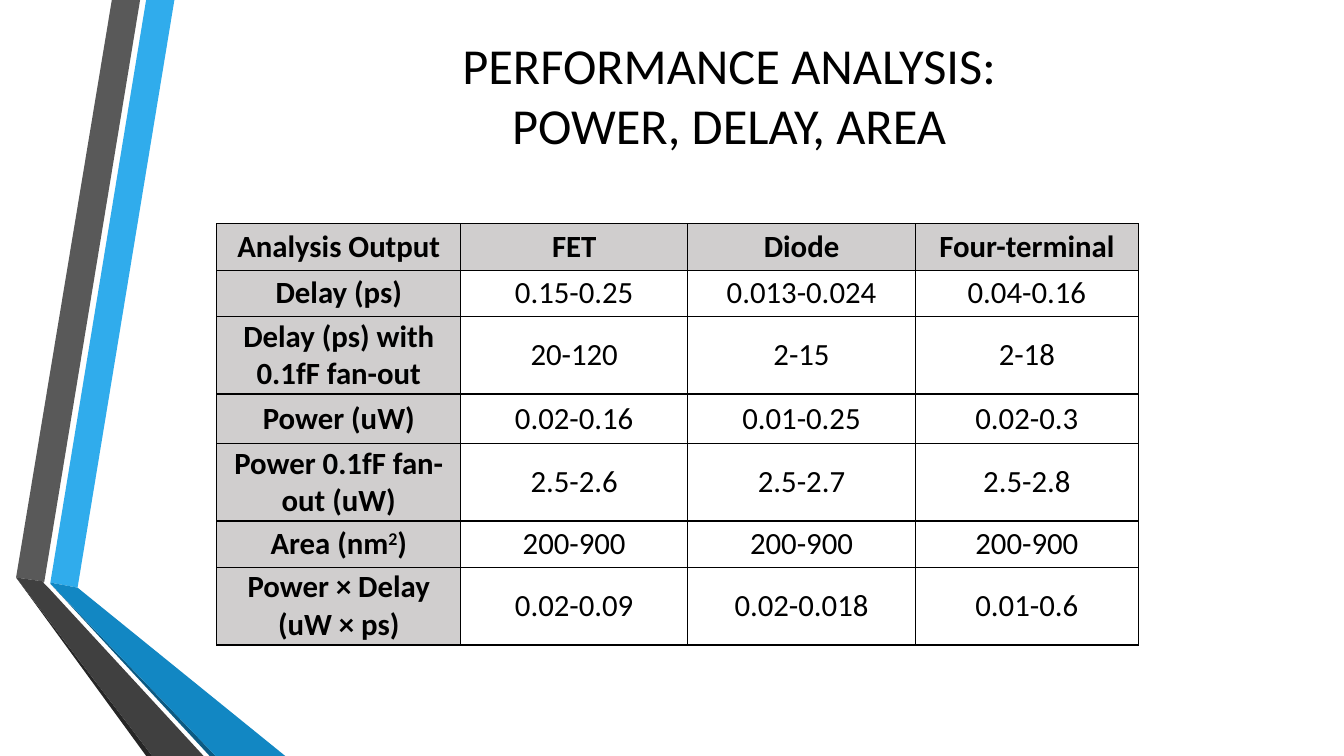
from lxml import etree
from pptx import Presentation
from pptx import util as u
from pptx.dml import color
from pptx.enum import text
from pptx.oxml import ns

FONT = "Calibri"
BLACK, WHITE, HEADER_GREY = "000000", "FFFFFF", "D0CECE"

RIBBONS = [
    ("30ACEC", [(0.5, 5.78), (0.77, 5.83), (1.73, 0), (1.45, 0)]),
    ("595959", [(1.39, 0), (1.11, 0), (0.16, 5.73), (0.44, 5.77)]),
    ("262626", [(0.16, 5.73), (1.45, 7.5), (1.51, 7.5)]),
    ("0C5A82", [(0.5, 5.79), (2.08, 7.5), (2.14, 7.5)]),
    ("1287C3", [(0.5, 5.79), (2.14, 7.5), (2.83, 7.5), (0.77, 5.83), (0.5, 5.78)]),
    ("404040", [(2.02, 7.5), (0.48, 5.83), (0.43, 5.78), (0.44, 5.77),
                (0.16, 5.73), (1.51, 7.5)]),
]

COLUMN_WIDTHS = [2.42, 2.25, 2.26, 2.21]
ROW_HEIGHTS = [0.46, 0.46, 0.77, 0.49, 0.77, 0.46, 0.77]
# A caret marks the next character as superscript.
ANALYSIS = [
    ["Analysis Output", "FET", "Diode", "Four-terminal"],
    ["Delay (ps)", "0.15-0.25", "0.013-0.024", "0.04-0.16"],
    ["Delay (ps) with 0.1fF fan-out", "20-120", "2-15", "2-18"],
    ["Power (uW)", "0.02-0.16", "0.01-0.25", "0.02-0.3"],
    ["Power 0.1fF fan-out (uW)", "2.5-2.6", "2.5-2.7", "2.5-2.8"],
    ["Area (nm^2)", "200-900", "200-900", "200-900"],
    ["Power × Delay (uW × ps)", "0.02-0.09", "0.02-0.018", "0.01-0.6"],
]


def paint(fill, shade):
    fill.solid()
    fill.fore_color.rgb = color.RGBColor.from_string(shade)


def style(font, size, bold=False):
    font.name, font.size, font.bold = FONT, u.Pt(size), bold
    paint(font.fill, BLACK)


def add_ribbon(page, shade, points):
    corners = [(u.Inches(x), u.Inches(y)) for x, y in points]
    builder = page.shapes.build_freeform(*corners[0])
    builder.add_line_segments(corners[1:], close=True)
    ribbon = builder.convert_to_shape()
    ribbon.shadow.inherit = False
    paint(ribbon.fill, shade)
    ribbon.line.fill.background()


def add_title(page, wording):
    title = page.shapes.title
    title.left, title.top = u.Inches(1.81), u.Inches(0.25)
    title.width, title.height = u.Inches(10.96), u.Inches(1.37)
    frame = title.text_frame
    frame.text = wording
    frame.word_wrap = True
    frame.vertical_anchor = text.MSO_ANCHOR.MIDDLE
    para = frame.paragraphs[0]
    para.alignment = text.PP_ALIGN.CENTER
    for span in para.runs:
        style(span.font, 36)


def add_borders(cell):
    properties = cell._tc.get_or_add_tcPr()
    for position, side in enumerate(("lnL", "lnR", "lnT", "lnB")):
        line = etree.Element(ns.qn(f"a:{side}"), w=str(u.Pt(1)))
        solid = etree.SubElement(line, ns.qn("a:solidFill"))
        etree.SubElement(solid, ns.qn("a:srgbClr"), val=BLACK)
        properties.insert(position, line)


def fill_cell(cell, wording, heading):
    paint(cell.fill, HEADER_GREY if heading else WHITE)
    add_borders(cell)
    cell.margin_left = cell.margin_right = u.Inches(0.02)
    cell.margin_top = cell.margin_bottom = 0
    cell.vertical_anchor = text.MSO_ANCHOR.MIDDLE
    para = cell.text_frame.paragraphs[0]
    para.alignment = text.PP_ALIGN.CENTER
    base, _, raised = wording.partition("^")
    for part, baseline in ((base, 0), (raised[:1], 30000), (raised[1:], 0)):
        if part:
            span = para.add_run()
            span.text = part
            style(span.font, 22, heading)
            if baseline:
                span._r.get_or_add_rPr().set("baseline", str(baseline))


def add_analysis_table(page):
    table = page.shapes.add_table(
        len(ROW_HEIGHTS), len(COLUMN_WIDTHS), u.Inches(2.15), u.Inches(2.22),
        u.Inches(sum(COLUMN_WIDTHS)), u.Inches(sum(ROW_HEIGHTS))).table
    for column, width in zip(table.columns, COLUMN_WIDTHS):
        column.width = u.Inches(width)
    for row, height in zip(table.rows, ROW_HEIGHTS):
        row.height = u.Inches(height)
    for i, values in enumerate(ANALYSIS):
        for j, wording in enumerate(values):
            fill_cell(table.cell(i, j), wording, heading=i == 0 or j == 0)


def main():
    deck = Presentation()
    deck.slide_width, deck.slide_height = u.Inches(13.33), u.Inches(7.5)
    page = deck.slides.add_slide(deck.slide_layouts.get_by_name("Title Only"))
    paint(page.background.fill, WHITE)
    for shade, points in RIBBONS:
        add_ribbon(page, shade, points)
    add_analysis_table(page)
    add_title(page, "PERFORMANCE ANALYSIS: \vPOWER, DELAY, AREA ")
    deck.save("out.pptx")


if __name__ == "__main__":
    main()
